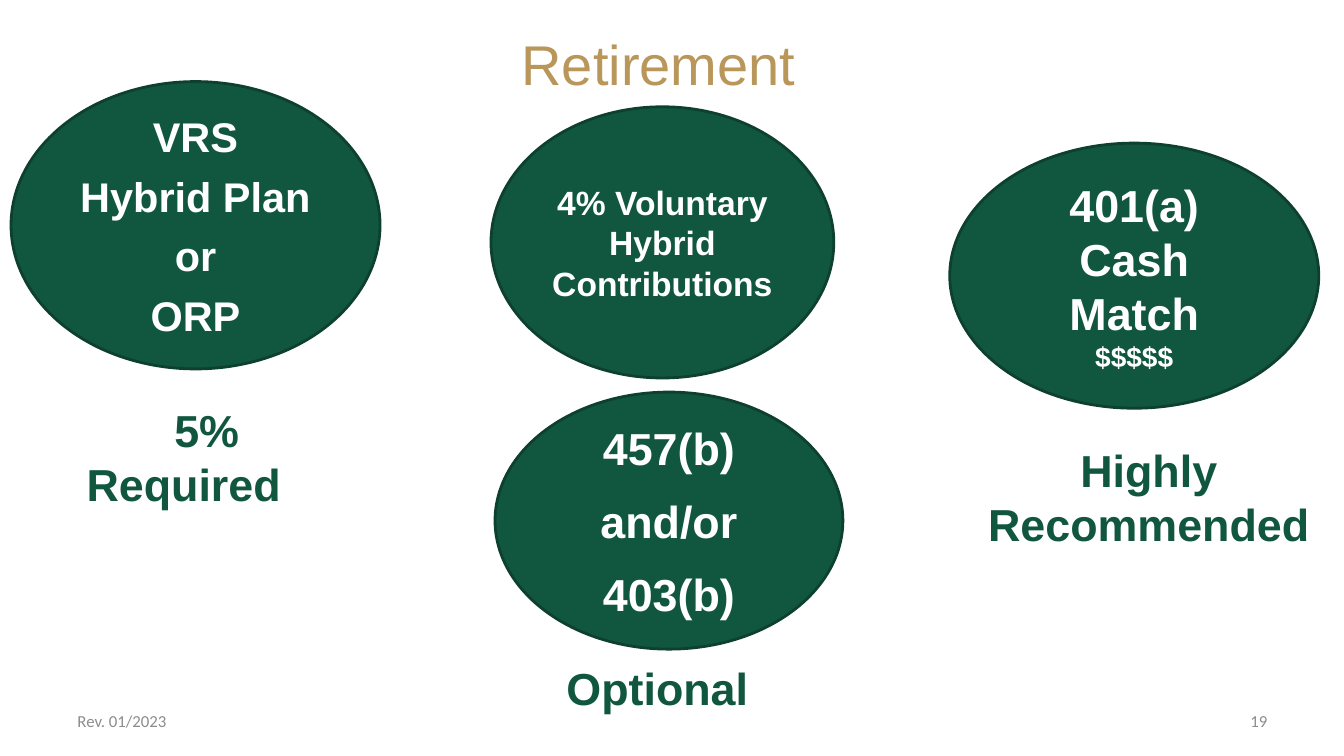
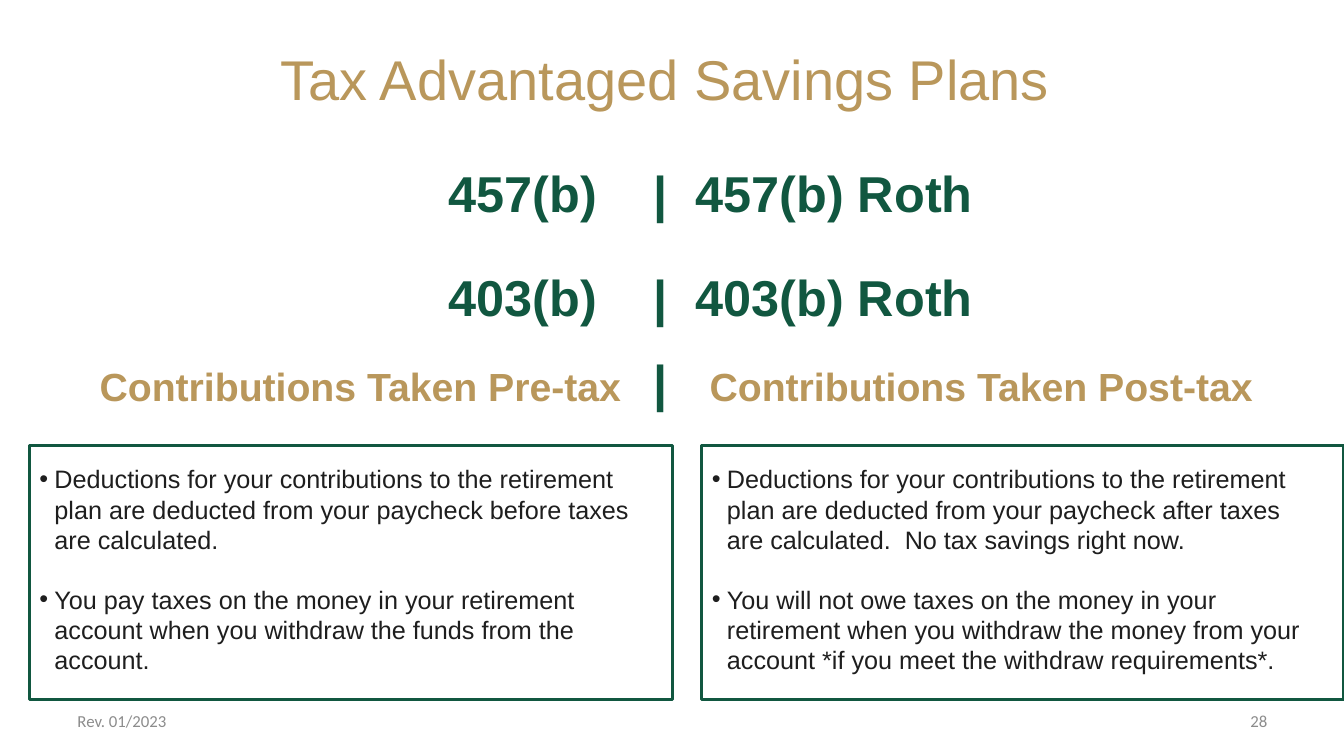
from pptx import Presentation
from pptx import util as u
from pptx.dml.color import RGBColor
from pptx.enum import shapes, text

# Shared look
GREEN = RGBColor(0x11, 0x57, 0x40)
DARK_GREEN = RGBColor(0x0D, 0x40, 0x2F)
GOLD = RGBColor(0xB9, 0x97, 0x5B)
WHITE = RGBColor(0xFF, 0xFF, 0xFF)
INK = RGBColor(0x1E, 0x1E, 0x1E)
GREY = RGBColor(0x8C, 0x8C, 0x8C)
LEFT, CENTER, RIGHT = (text.PP_ALIGN.LEFT, text.PP_ALIGN.CENTER,
                       text.PP_ALIGN.RIGHT)
TOP, MIDDLE = text.MSO_ANCHOR.TOP, text.MSO_ANCHOR.MIDDLE
TITLE_ONLY, TWO_CONTENT = 5, 3
REVISION = "Rev. 01/2023"

TITLE = dict(size=40, color=GOLD)
LABEL = dict(size=32, color=GREEN, bold=True)
OVAL = dict(size=32, color=WHITE, bold=True)
PLAN = dict(size=36, color=GREEN, bold=True)
TAX = dict(size=28, color=GOLD, bold=True)
LIST = dict(size=18, color=INK)
FOOTER = dict(size=12, color=GREY, name="Calibri")


def box(left, top, width, height):
    return [u.Inches(v) for v in (left, top, width, height)]


def set_frame(tf, anchor=TOP):
    values = dict(word_wrap=True, auto_size=text.MSO_AUTO_SIZE.NONE,
                  vertical_anchor=anchor)
    for key, value in values.items():
        setattr(tf, key, value)


def add_run(p, words, size, color, bold=False, name="Arial"):
    r = p.add_run()
    r.text = words
    for key, value in dict(size=u.Pt(size), bold=bold, name=name).items():
        setattr(r.font, key, value)
    r.font.color.rgb = color


def add_paragraphs(tf, paragraphs, align=LEFT, gap=0):
    """Each paragraph is a list of (words, format) runs."""
    for i, runs in enumerate(paragraphs):
        p = tf.paragraphs[0] if i == 0 else tf.add_paragraph()
        values = dict(alignment=align, line_spacing=1.0,
                      space_before=u.Pt(gap if i else 0))
        for key, value in values.items():
            setattr(p, key, value)
        for words, style in runs:
            add_run(p, words, **style)


def set_indent(p, margin, first):
    pPr = p._p.get_or_add_pPr()
    pPr.set("marL", str(u.Inches(margin)))
    pPr.set("indent", str(u.Inches(first)))


def set_tabs(tf, stops):
    for p in tf.paragraphs:
        pPr = p._p.get_or_add_pPr()
        tabs = pPr.makeelement(pPr.tag.replace("pPr", "tabLst"), {})
        for stop in stops:
            tab = tabs.makeelement(pPr.tag.replace("pPr", "tab"),
                                   {"pos": str(u.Inches(stop)), "algn": "l"})
            tabs.append(tab)
        pPr.append(tabs)


def add_text(s, place, paragraphs, align=LEFT, anchor=TOP, gap=0):
    tf = s.shapes.add_textbox(*box(*place)).text_frame
    set_frame(tf, anchor)
    add_paragraphs(tf, paragraphs, align, gap)
    return tf


def add_oval(s, place, lines, gap=0):
    """Each line is a (words, size) pair."""
    sp = s.shapes.add_shape(shapes.MSO_SHAPE.OVAL, *box(*place))
    sp.shadow.inherit = False
    sp.fill.solid()
    sp.fill.fore_color.rgb = GREEN
    sp.line.color.rgb = DARK_GREEN
    sp.line.width = u.Pt(2)
    set_frame(sp.text_frame, MIDDLE)
    paragraphs = [[(words, {**OVAL, "size": size})] for words, size in lines]
    add_paragraphs(sp.text_frame, paragraphs, CENTER, gap)


def fill_list(sp, place, items):
    sp.left, sp.top, sp.width, sp.height = box(*place)
    sp.line.color.rgb = GREEN
    sp.line.width = u.Pt(2.25)
    tf = sp.text_frame
    set_frame(tf)
    tf.margin_top, tf.margin_right = u.Inches(0.18), u.Inches(0.3)
    add_paragraphs(tf, [[(item, LIST)] for item in items], gap=21)
    for p in tf.paragraphs:
        set_indent(p, 0.15, -0.15)


def add_slide(prs, layout, title, left, top, number):
    """Slide with its title and footers."""
    s = prs.slides.add_slide(prs.slide_layouts[layout])
    sp = s.shapes.title
    sp.left, sp.top, sp.width, sp.height = box(left, top, 12, 1.25)
    set_frame(sp.text_frame, MIDDLE)
    add_paragraphs(sp.text_frame, [[(title, TITLE)]], CENTER)
    for x, words, align in ((0.67, REVISION, LEFT), (9.56, number, RIGHT)):
        add_text(s, (x, 6.95, 3.11, 0.4), [[(words, FOOTER)]], align, MIDDLE)
    return s


def build_retirement(prs):
    s = add_slide(prs, TITLE_ONLY, "Retirement", 0.53, 0, "19")

    # Plans
    add_oval(s, (0.11, 0.81, 3.66, 2.85),
             [(words, 29.6) for words in ("VRS", "Hybrid Plan", "or", "ORP")],
             gap=7)
    add_oval(s, (9.42, 1.42, 3.66, 2.63),
             [("401(a)", 32), ("Cash Match", 32), ("$$$$$", 20)])
    add_oval(s, (4.91, 3.89, 3.45, 2.55),
             [(words, 32) for words in ("457(b)", "and/or", "403(b)")], gap=14)
    add_oval(s, (4.87, 1.06, 3.4, 2.69),
             [("4% Voluntary Hybrid", 24), ("Contributions", 24)])

    # Labels under the plans
    required = add_text(s, (0.76, 3.95, 2.82, 1.18), [[("5% Required", LABEL)]])
    set_indent(required.paragraphs[0], 0, 0.87)
    add_text(s, (9.59, 4.34, 3.61, 1.18), [[("Highly Recommended", LABEL)]],
             CENTER)
    add_text(s, (5.52, 6.51, 2.72, 0.64), [[("Optional", LABEL)]])


def build_savings(prs):
    s = add_slide(prs, TWO_CONTENT, "Tax Advantaged Savings Plans",
                  0.59, 0.15, "28")

    # Plan pairs, parted by a bar
    plans = add_text(s, (4.35, 1.56, 6, 1.9),
                     [[(f"{plan}\t|\t{plan} Roth", PLAN)]
                      for plan in ("457(b)", "403(b)")], gap=31)
    set_tabs(plans, (2.03, 2.45))
    heads = add_text(s, (0.89, 3.43, 12.4, 0.71),
                     [[("Contributions Taken Pre-tax\t", TAX), ("|", PLAN),
                       ("\tContributions Taken Post-tax", TAX)]])
    set_tabs(heads, (5.49, 6.05))

    # What each kind of contribution means
    fill_list(s.placeholders[1], (0.29, 4.42, 6.38, 2.52), [
        "Deductions for your contributions to the retirement plan are "
        "deducted from your paycheck before taxes are calculated.",
        "You pay taxes on the money in your retirement account when you "
        "withdraw the funds from the account."])
    fill_list(s.placeholders[2], (6.96, 4.42, 6.37, 2.52), [
        "Deductions for your contributions to the retirement plan are "
        "deducted from your paycheck after taxes are calculated.  "
        "No tax savings right now.",
        "You will not owe taxes on the money in your retirement when you "
        "withdraw the money from your account *if you meet the withdraw "
        "requirements*."])


def main():
    prs = Presentation()
    prs.slide_width, prs.slide_height = u.Inches(13.33), u.Inches(7.5)
    build_retirement(prs)
    build_savings(prs)
    prs.save("out.pptx")


if __name__ == "__main__":
    main()
